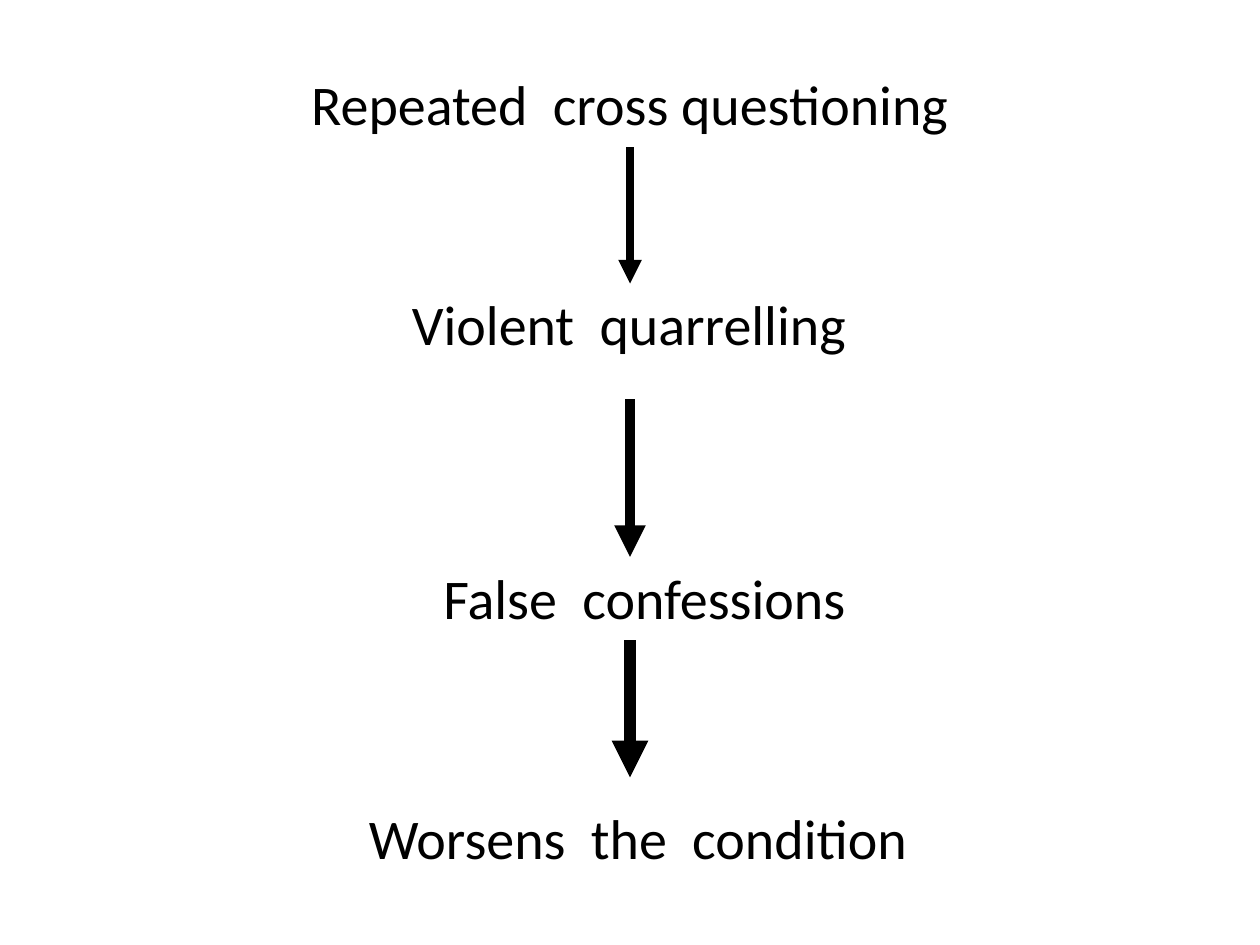
from pptx import Presentation
from pptx.dml.color import RGBColor
from pptx.enum.shapes import MSO_CONNECTOR
from pptx.enum.text import MSO_ANCHOR, PP_ALIGN
from pptx.oxml.ns import qn
from pptx.util import Inches, Pt
from lxml import etree

STRAIGHT = MSO_CONNECTOR.STRAIGHT
TOP, CENTER, LEFT = MSO_ANCHOR.TOP, PP_ALIGN.CENTER, PP_ALIGN.LEFT
BLACK = "000000"
CENTER_X = 5
STEP_HEIGHT = 0.63

FIRST_STEP = "Repeated  cross questioning"
# text, left, top, width
LATER_STEPS = [
    ("Violent  quarrelling", 3.17, 2.25, 3.92),
    ("False  confessions", 3.42, 4.42, 4.92),
    ("Worsens  the  condition", 2.83, 6.33, 5),
]
# top, bottom, line width in points
ARROWS = [(1.17, 2.25, 4.5), (3.17, 4.42, 6), (5.08, 6.17, 7)]


def color(value):
    return RGBColor.from_string(value)


def write(box, text, align):
    frame = box.text_frame
    frame.word_wrap = True
    frame.vertical_anchor = TOP
    para = frame.paragraphs[0]
    para.text = text
    para.alignment = align
    para.font.name = "Calibri"
    para.font.size = Pt(32)
    para.font.color.rgb = color(BLACK)
    return para


def add_arrow(page, top, bottom, width):
    arrow = page.shapes.add_connector(
        STRAIGHT, Inches(CENTER_X), Inches(top), Inches(CENTER_X), Inches(bottom))
    arrow.line.color.rgb = color(BLACK)
    arrow.line.width = Pt(width)
    etree.SubElement(arrow.line._get_or_add_ln(), qn("a:tailEnd"), type="triangle")
    etree.SubElement(arrow._element.spPr, qn("a:effectLst"))


def main():
    deck = Presentation()
    deck.slide_width, deck.slide_height = Inches(10), Inches(7.5)
    page = deck.slides.add_slide(deck.slide_layouts[1])
    title = page.shapes.title._element
    title.getparent().remove(title)

    body = page.placeholders[1]
    body.left, body.top = Inches(0.5), Inches(0.5)
    body.width, body.height = Inches(9), Inches(6.42)
    properties = write(body, FIRST_STEP, CENTER)._p.get_or_add_pPr()
    properties.set("marL", str(Inches(0.38)))
    properties.set("indent", str(Inches(-0.38)))
    properties.insert(0, etree.Element(qn("a:buNone")))

    for arrow in ARROWS:
        add_arrow(page, *arrow)
    for text, left, top, width in LATER_STEPS:
        box = page.shapes.add_textbox(
            Inches(left), Inches(top), Inches(width), Inches(STEP_HEIGHT))
        write(box, text, LEFT)

    deck.save("out.pptx")


if __name__ == "__main__":
    main()
